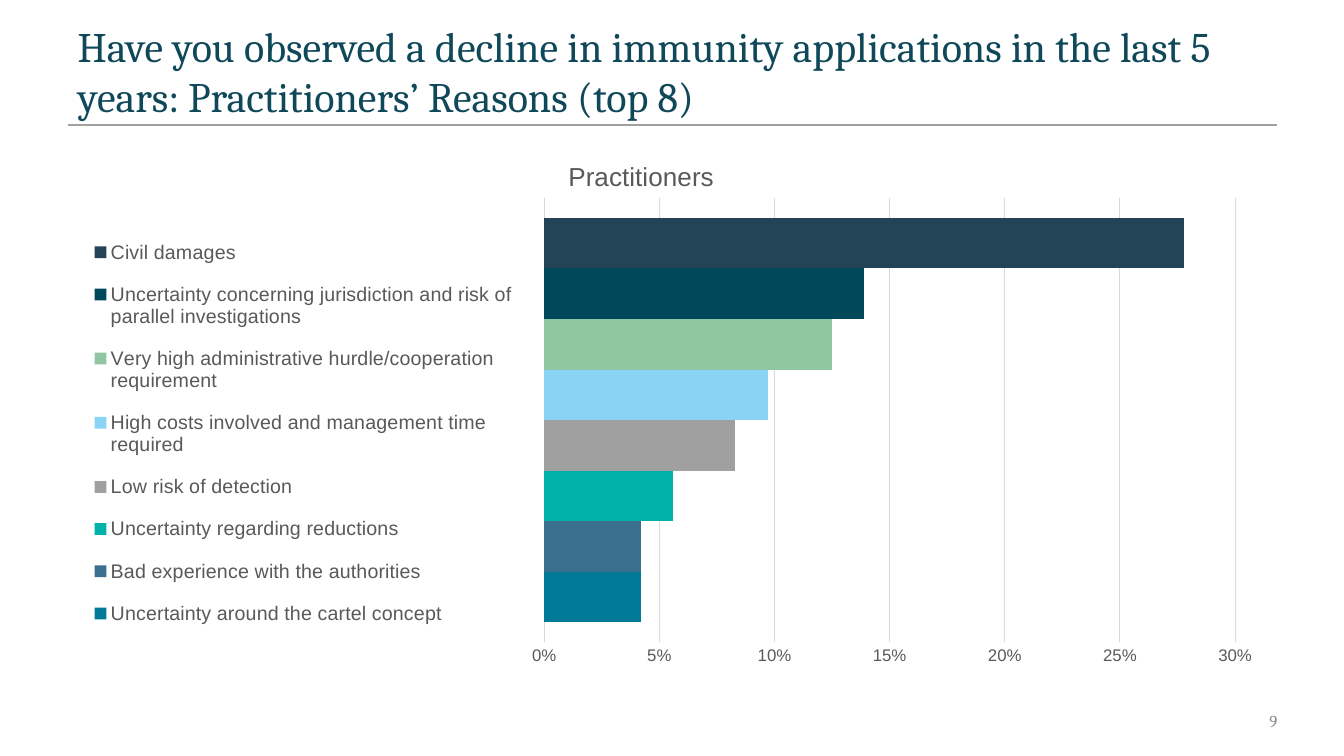
from dataclasses import dataclass

from lxml import etree
from pptx import Presentation
from pptx.chart.data import CategoryChartData
from pptx.dml.color import RGBColor
from pptx.enum.chart import XL_CHART_TYPE, XL_LEGEND_POSITION, XL_TICK_MARK
from pptx.enum.shapes import MSO_CONNECTOR
from pptx.enum.text import MSO_ANCHOR, MSO_AUTO_SIZE, PP_ALIGN
from pptx.oxml.ns import qn
from pptx.util import Inches, Pt

BAR_CLUSTERED = XL_CHART_TYPE.BAR_CLUSTERED
LEGEND_LEFT = XL_LEGEND_POSITION.LEFT
NO_TICK = XL_TICK_MARK.NONE
STRAIGHT = MSO_CONNECTOR.STRAIGHT
BOTTOM, MIDDLE = MSO_ANCHOR.BOTTOM, MSO_ANCHOR.MIDDLE
LEFT, RIGHT = PP_ALIGN.LEFT, PP_ALIGN.RIGHT
NO_FIT = MSO_AUTO_SIZE.NONE

TITLE = ("Have you observed a decline in immunity applications in the last 5 "
         "years: Practitioners’ Reasons (top 8)")
PAGE_NUMBER = "9"
CHART_TITLE = "Practitioners"
REASONS = [
    ("Uncertainty around the cartel concept", 0.042, "007A96"),
    ("Bad experience with the authorities", 0.042, "3A6F8F"),
    ("Uncertainty regarding reductions", 0.056, "00B2A9"),
    ("Low risk of detection", 0.083, "A0A0A0"),
    ("High costs involved and management time required", 0.097, "8BD3F5"),
    ("Very high administrative hurdle/cooperation requirement", 0.125, "90C6A2"),
    ("Uncertainty concerning jurisdiction and risk of parallel investigations",
     0.139, "00495A"),
    ("Civil damages", 0.278, "234356"),
]


@dataclass(frozen=True)
class Theme:
    heading_font: str = "Cambria"
    chart_font: str = "Arial"
    heading: str = "0F4859"
    number: str = "8C8C8C"
    chart_text: str = "595959"
    rule: str = "A0A0A0"
    grid: str = "D9D9D9"
    heading_size: float = 30
    chart_title_size: float = 18.6
    legend_size: float = 14
    small_size: float = 12


THEME = Theme()
WIDTH, HEIGHT = 13.33, 7.5
MARGIN = 0.67
CONTENT = 12
RULE_TOP = 1.24
CHART_TOP, CHART_BOTTOM = 1.42, 6.95
NUMBER_WIDTH, NUMBER_HEIGHT = CONTENT / 4, 0.4
PLOT_AREA = {"x": 0.394, "y": 0.098, "w": 0.571, "h": 0.798}
LEGEND_AREA = {"x": 0.01, "y": 0.14, "w": 0.37, "h": 0.76}
CHART_TITLE_AREA = {"x": 0.41, "y": 0.02}


def style_font(font, size, color, name):
    font.size = Pt(size)
    font.name = name
    font.bold = False
    font.color.rgb = RGBColor.from_string(color)


def write_text(shape, text, size, color, align=LEFT, anchor=MIDDLE, right=0.1):
    frame = shape.text_frame
    frame.auto_size = NO_FIT
    frame.word_wrap = True
    frame.vertical_anchor = anchor
    frame.margin_left, frame.margin_right = Inches(0.1), Inches(right)
    frame.margin_top = frame.margin_bottom = Inches(0.05)
    para = frame.paragraphs[0]
    para.alignment = align
    span = para.add_run()
    span.text = text
    style_font(span.font, size, color, THEME.heading_font)


def set_layout(element, area, before, inner=False):
    for old in element.findall(qn("c:layout")):
        element.remove(old)
    layout = etree.Element(qn("c:layout"))
    manual = etree.SubElement(layout, qn("c:manualLayout"))
    settings = {"layoutTarget": "inner"} if inner else {}
    settings.update(xMode="edge", yMode="edge", **area)
    for key, value in settings.items():
        etree.SubElement(manual, qn("c:" + key)).set("val", str(value))
    element.find(qn("c:" + before)).addprevious(layout)


def add_rule(page):
    rule = page.shapes.add_connector(
        STRAIGHT, Inches(MARGIN), Inches(RULE_TOP),
        Inches(MARGIN + CONTENT), Inches(RULE_TOP))
    rule.line.color.rgb = RGBColor.from_string(THEME.rule)
    rule.line.width = Pt(1)
    etree.SubElement(rule._element.spPr, qn("a:effectLst"))


def add_reasons_chart(page):
    data = CategoryChartData(number_format="0.0%")
    data.categories = ["1"]
    for name, share, color in REASONS:
        data.add_series(name, [share])
    chart = page.shapes.add_chart(
        BAR_CLUSTERED, Inches(MARGIN), Inches(CHART_TOP), Inches(CONTENT),
        Inches(CHART_BOTTOM - CHART_TOP), data).chart
    style_font(chart.font, THEME.small_size, THEME.chart_text, THEME.chart_font)

    plot = chart.plots[0]
    plot.gap_width = 80
    plot.overlap = 0
    plot.vary_by_categories = False
    for series, (name, share, color) in zip(plot.series, REASONS):
        series.format.fill.solid()
        series.format.fill.fore_color.rgb = RGBColor.from_string(color)

    chart.category_axis.visible = False
    axis = chart.value_axis
    axis.minimum_scale, axis.maximum_scale, axis.major_unit = 0, 0.3, 0.05
    axis.major_tick_mark = axis.minor_tick_mark = NO_TICK
    axis.tick_labels.number_format = "0%"
    axis.tick_labels.number_format_is_linked = False
    style_font(axis.tick_labels.font, THEME.small_size, THEME.chart_text,
               THEME.chart_font)
    axis.format.line.fill.background()
    grid = axis.major_gridlines.format.line
    grid.color.rgb = RGBColor.from_string(THEME.grid)
    grid.width = Pt(0.75)

    chart.has_title = True
    para = chart.chart_title.text_frame.paragraphs[0]
    span = para.add_run()
    span.text = CHART_TITLE
    style_font(span.font, THEME.chart_title_size, THEME.chart_text,
               THEME.chart_font)

    chart.has_legend = True
    legend = chart.legend
    legend.position = LEGEND_LEFT
    legend.include_in_layout = False
    style_font(legend.font, THEME.legend_size, THEME.chart_text,
               THEME.chart_font)

    set_layout(plot._element.getparent(), PLOT_AREA, "barChart", inner=True)
    set_layout(legend._element, LEGEND_AREA, "overlay")
    set_layout(chart.chart_title._element, CHART_TITLE_AREA, "overlay")


def main():
    deck = Presentation()
    deck.slide_width, deck.slide_height = Inches(WIDTH), Inches(HEIGHT)
    page = deck.slides.add_slide(deck.slide_layouts[5])
    add_rule(page)

    title = page.shapes.title
    title.left, title.top = Inches(MARGIN), Inches(0.58)
    title.width, title.height = Inches(CONTENT), Inches(0.67)
    write_text(title, TITLE, THEME.heading_size, THEME.heading, anchor=BOTTOM)

    number = page.shapes.add_textbox(
        Inches(MARGIN + CONTENT - NUMBER_WIDTH), Inches(CHART_BOTTOM),
        Inches(NUMBER_WIDTH), Inches(NUMBER_HEIGHT))
    write_text(number, PAGE_NUMBER, THEME.small_size, THEME.number,
               align=RIGHT, right=0)

    add_reasons_chart(page)
    deck.save("out.pptx")


if __name__ == "__main__":
    main()
